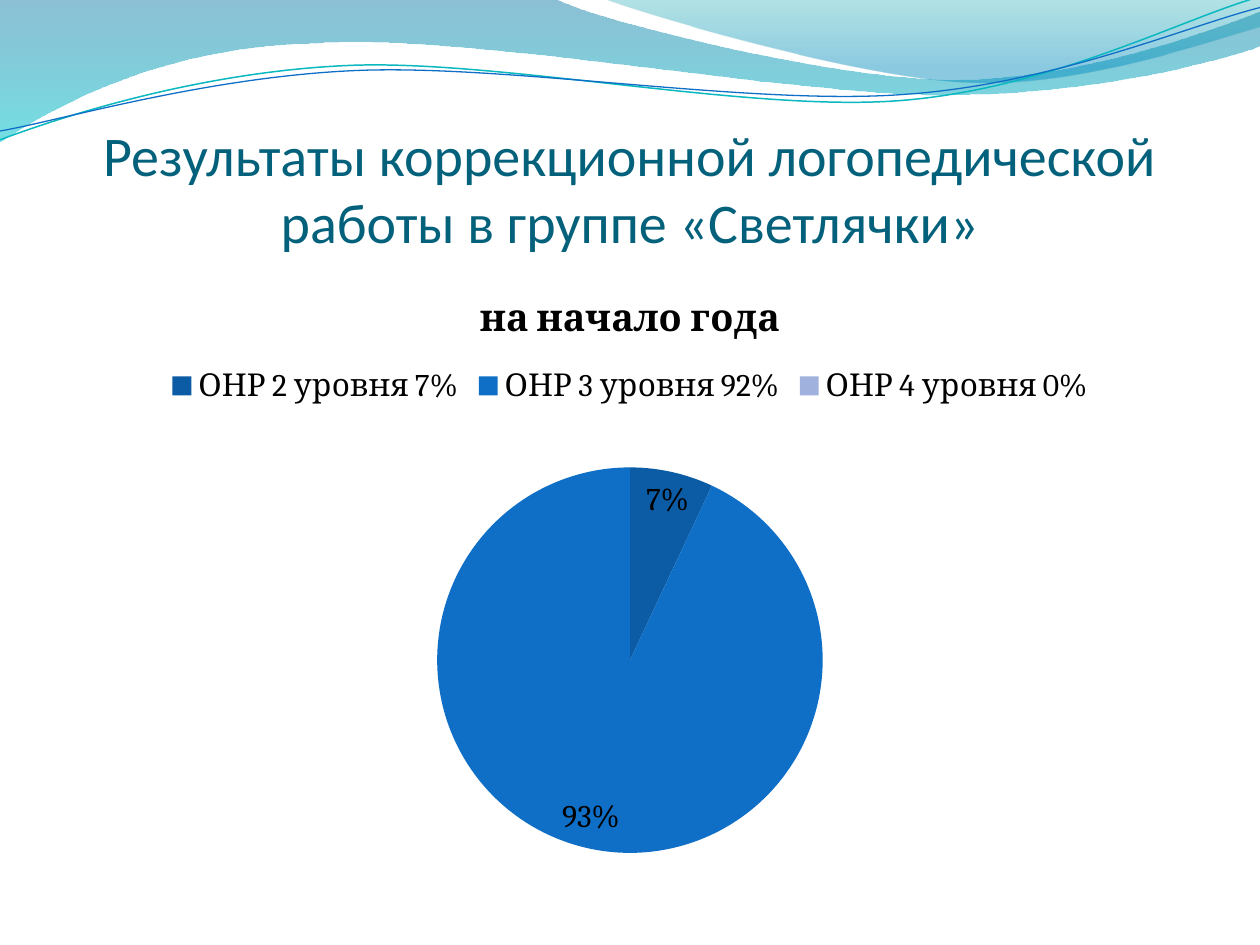
from dataclasses import dataclass
from typing import NamedTuple

from lxml import etree
from pptx import Presentation
from pptx.chart.data import CategoryChartData
from pptx.dml.color import RGBColor
from pptx.enum.chart import XL_CHART_TYPE, XL_LABEL_POSITION, XL_LEGEND_POSITION
from pptx.enum.text import MSO_ANCHOR, PP_ALIGN
from pptx.oxml.ns import qn
from pptx.util import Inches, Pt

PIE = XL_CHART_TYPE.PIE
BEST_FIT = XL_LABEL_POSITION.BEST_FIT
LEGEND_TOP = XL_LEGEND_POSITION.TOP
BOTTOM = MSO_ANCHOR.BOTTOM
CENTER = PP_ALIGN.CENTER

# The slide is a grid of square cells, one inch each
COLUMNS, ROWS = 10, 7.5
CELL = Inches(1)

Point = tuple[float, float]


@dataclass(frozen=True)
class Theme:
    heading_font: str = "Calibri"
    chart_font: str = "Cambria"
    heading_size: float = 32
    chart_title_size: float = 21.6
    chart_size: float = 18
    heading: str = "04617B"
    chart_text: str = "000000"
    slices: tuple[str, ...] = ("0B5CA5", "0F6FC6", "A0B1DD")


class Area(NamedTuple):
    """A block of grid cells."""
    column: float
    row: float
    columns: float
    rows: float

    def emu(self) -> list[int]:
        return [round(cells * CELL) for cells in self]


class Stop(NamedTuple):
    position: float
    color: str
    opacity: int


class Bezier(NamedTuple):
    """A cubic curve going on from the previous point."""
    control_1: Point
    control_2: Point
    end: Point


class Line(NamedTuple):
    end: Point


@dataclass(frozen=True)
class Wave:
    start: Point
    steps: tuple[Bezier | Line, ...]
    gradient: tuple[Stop, ...] = ()
    stroke: str = ""
    weight: float = 0


THEME = Theme()
HEADING_AREA = Area(0.5, 0.77, COLUMNS - 1, 1.25)
CHART_AREA = Area(0.5, 2.12, COLUMNS - 1, 4.8)
# Shares of the chart's size taken by the pie
PIE_SHARES = {"x": 0.33, "y": 0.33, "w": 0.34, "h": 0.64}

WAVES = (
    # Wide band along the top
    Wave((0, -0.01), (
        Line((4.4, -0.01)),
        Bezier((4.76, 0.17), (6.64, 0.63), (7.58, 0.63)),
        Bezier((8.53, 0.63), (9.58, 0.26), (10, 0.09)),
        Line((10.01, 0.36)),
        Bezier((9.83, 0.44), (8.7, 0.76), (7.46, 0.75)),
        Bezier((6.22, 0.75), (3.82, 0.28), (2.57, 0.34)),
        Bezier((1.29, 0.36), (0.46, 0.83), (-0.01, 1.13)),
    ), gradient=(Stop(0, "0074A1", 45), Stop(1, "00C6CF", 55))),
    # Right-hand crest
    Wave((4.79, -0.01), (
        Bezier((5.09, 0.11), (6.82, 0.62), (7.69, 0.65)),
        Bezier((8.56, 0.69), (9.61, 0.32), (10, 0.21)),
        Line((10, 0)),
    ), gradient=(Stop(0, "00A1A9", 30), Stop(0.8, "008BBF", 45))),
    # Two thin strands
    Wave((0, 1.11), (
        Bezier((0.48, 0.93), (1.58, 0.57), (2.77, 0.52)),
        Bezier((3.95, 0.47), (5.93, 0.89), (7.13, 0.8)),
        Bezier((8.33, 0.71), (9.38, 0.15), (9.98, -0.02)),
    ), stroke="0AB8BF", weight=0.85),
    Wave((0, 1.04), (
        Bezier((0.47, 0.96), (1.64, 0.61), (2.83, 0.56)),
        Bezier((4.03, 0.51), (5.97, 0.84), (7.17, 0.75)),
        Bezier((8.36, 0.67), (9.41, 0.21), (10, 0.06)),
    ), stroke="0F6FC6", weight=0.75),
)


def to_emu(point: Point) -> Point:
    return round(point[0] * CELL), round(point[1] * CELL)


def bend_segments(shape, steps: tuple[Bezier | Line, ...]) -> None:
    """Turn the straight segments of curved steps into cubic curves."""
    segments = list(shape.element.spPr.iter(qn("a:lnTo")))
    for segment, step in zip(segments, steps):
        if isinstance(step, Line):
            continue
        segment.tag = qn("a:cubicBezTo")
        for index, control in enumerate((step.control_1, step.control_2)):
            x, y = to_emu(control)
            segment.insert(index, segment.makeelement(
                qn("a:pt"), {"x": str(x - shape.left), "y": str(y - shape.top)}))


def draw_wave(slide, wave: Wave) -> None:
    builder = slide.shapes.build_freeform(*to_emu(wave.start))
    builder.add_line_segments([to_emu(step.end) for step in wave.steps],
                              close=bool(wave.gradient))
    shape = builder.convert_to_shape()
    bend_segments(shape, wave.steps)
    shape.shadow.inherit = False
    if not wave.gradient:
        shape.fill.background()
        shape.line.color.rgb = RGBColor.from_string(wave.stroke)
        shape.line.width = Pt(wave.weight)
        return
    shape.line.fill.background()
    shape.fill.gradient()
    shape.fill.gradient_angle = 270
    for target, stop in zip(shape.fill.gradient_stops, wave.gradient):
        target.position = stop.position
        target.color.rgb = RGBColor.from_string(stop.color)
    colors = list(shape.element.spPr.iter(qn("a:srgbClr")))
    for color, stop in zip(colors, wave.gradient):
        etree.SubElement(color, qn("a:alpha"), val=str(stop.opacity * 1000))


def style_font(font, name: str, size: float, color: str, bold: bool = False) -> None:
    font.name, font.size, font.bold = name, Pt(size), bold
    font.color.rgb = RGBColor.from_string(color)


def draw_heading(slide, wording: str, area: Area) -> None:
    frame = slide.shapes.add_textbox(*area.emu()).text_frame
    frame.word_wrap = True
    frame.vertical_anchor = BOTTOM
    frame.margin_left = frame.margin_right = frame.margin_bottom = 0
    paragraph = frame.paragraphs[0]
    paragraph.alignment = CENTER
    run = paragraph.add_run()
    run.text = wording
    style_font(run.font, THEME.heading_font, THEME.heading_size, THEME.heading)


def place_plot(chart, shares: dict[str, float]) -> None:
    area = chart.element.chart.plotArea
    for old in area.findall(qn("c:layout")):
        area.remove(old)
    layout = area.makeelement(qn("c:layout"), {})
    area.insert(0, layout)
    manual = etree.SubElement(layout, qn("c:manualLayout"))
    settings = {"layoutTarget": "inner", "xMode": "edge", "yMode": "edge", **shares}
    for tag, value in settings.items():
        etree.SubElement(manual, qn(f"c:{tag}"), val=str(value))


def draw_pie(slide, title: str, levels: dict[str, float | None], area: Area) -> None:
    data = CategoryChartData()
    data.categories = list(levels)
    data.add_series(title, list(levels.values()))
    chart = slide.shapes.add_chart(PIE, *area.emu(), data).chart
    style_font(chart.font, THEME.chart_font, THEME.chart_size, THEME.chart_text)
    place_plot(chart, PIE_SHARES)

    # Title and legend
    run = chart.chart_title.text_frame.paragraphs[0].add_run()
    run.text = title
    style_font(run.font, THEME.chart_font, THEME.chart_title_size,
               THEME.chart_text, bold=True)
    chart.has_legend = True
    chart.legend.position = LEGEND_TOP
    chart.legend.include_in_layout = False

    # Slices and their shares
    plot = chart.plots[0]
    plot.vary_by_categories = True
    for index, color in enumerate(THEME.slices):
        fill = plot.series[0].points[index].format.fill
        fill.solid()
        fill.fore_color.rgb = RGBColor.from_string(color)
    plot.has_data_labels = True
    labels = plot.data_labels
    labels.show_percentage, labels.show_value = True, False
    labels.position = BEST_FIT


def main() -> None:
    deck = Presentation()
    deck.slide_width, deck.slide_height = COLUMNS * CELL, round(ROWS * CELL)
    slide = deck.slides.add_slide(deck.slide_layouts[6])
    for wave in WAVES:
        draw_wave(slide, wave)
    draw_heading(slide, "Результаты коррекционной логопедической работы "
                        "в группе «Светлячки»", HEADING_AREA)
    draw_pie(slide, "на начало года", {
        "ОНР 2 уровня 7%": 7, "ОНР 3 уровня 92%": 93, "ОНР 4 уровня 0%": None,
    }, CHART_AREA)
    deck.save("out.pptx")


if __name__ == "__main__":
    main()
